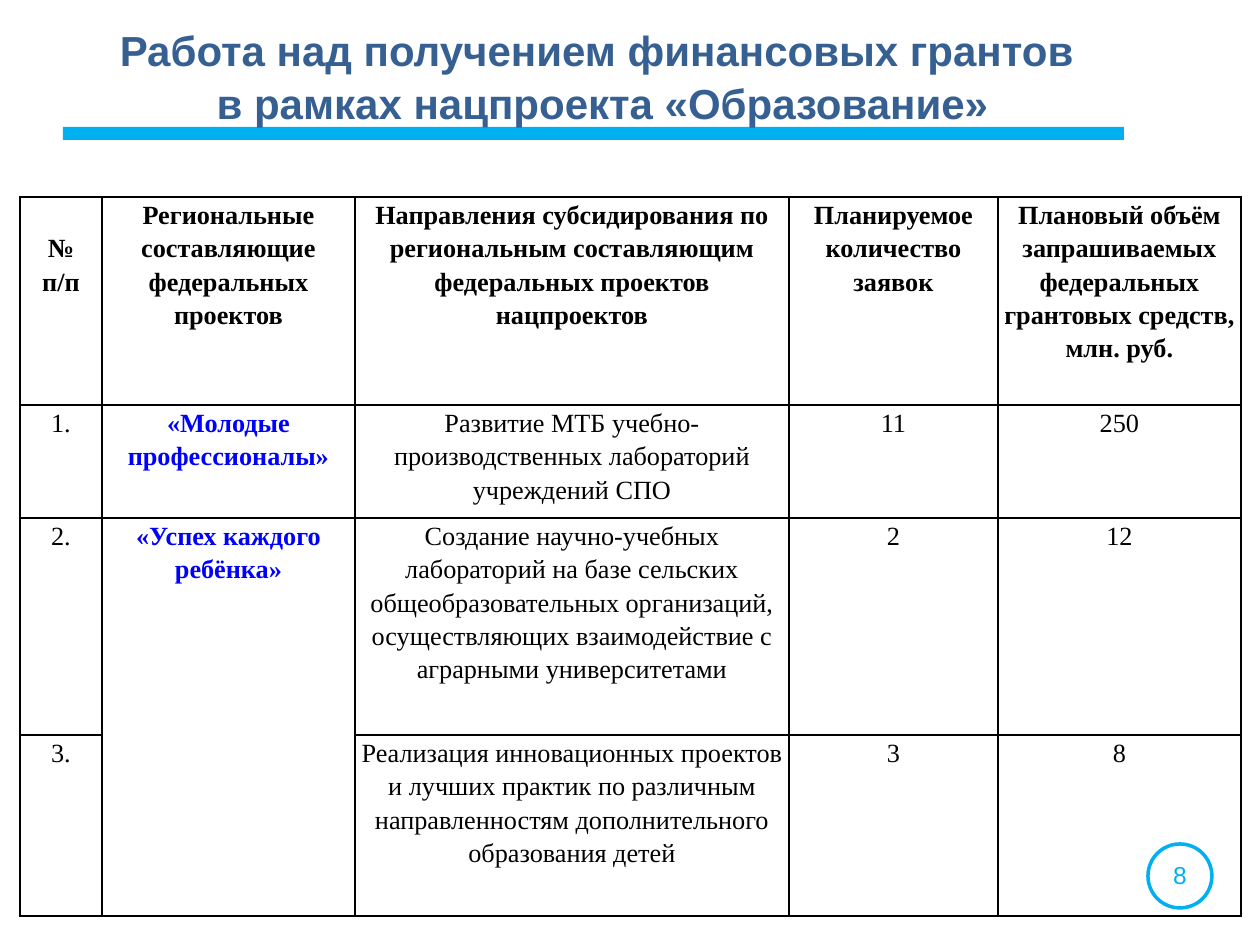
from lxml import etree
from pptx import Presentation
from pptx.dml.color import RGBColor
from pptx.enum.shapes import MSO_SHAPE
from pptx.enum.text import MSO_ANCHOR, PP_ALIGN
from pptx.oxml.ns import qn
from pptx.util import Emu, Pt

RECTANGLE, OVAL = MSO_SHAPE.RECTANGLE, MSO_SHAPE.OVAL
CENTER = PP_ALIGN.CENTER
TOP, MIDDLE = MSO_ANCHOR.TOP, MSO_ANCHOR.MIDDLE

COLORS = {
    "accent": "00B0F0",
    "title": "376092",
    "text": "000000",
    "project": "0000FF",
    "border": "000000",
}
PX_PER_INCH = 126

TITLE = [
    "Работа над получением финансовых грантов ",
    "в рамках нацпроекта «Образование»",
]
COLUMN_WIDTHS = [82, 253, 434, 209, 243]
ROW_HEIGHTS = [208, 113, 217, 181]
GRANTS = [
    [
        "\t№ п/п",
        "Региональные составляющие федеральных проектов",
        "Направления субсидирования по региональным составляющим "
        "федеральных проектов нацпроектов",
        "Планируемое количество заявок",
        "Плановый объём запрашиваемых федеральных грантовых средств, млн. руб.",
    ],
    [
        "1.",
        "«Молодые профессионалы»",
        "Развитие МТБ учебно-производственных лабораторий учреждений СПО",
        "11",
        "250",
    ],
    [
        "2.",
        "«Успех каждого ребёнка»",
        "Создание научно-учебных лабораторий на базе сельских "
        "общеобразовательных организаций, осуществляющих взаимодействие "
        "с аграрными университетами",
        "2",
        "12",
    ],
    [
        "3.",
        "",
        "Реализация инновационных проектов и лучших практик по различным "
        "направленностям дополнительного образования детей",
        "3",
        "8",
    ],
]


def px(value):
    return Emu(round(value * 914400 / PX_PER_INCH))


def color(name):
    return RGBColor.from_string(COLORS[name])


def style_paragraph(paragraph, font_name, size, color_name, bold=False):
    paragraph.alignment = CENTER
    for run in paragraph.runs:
        run.font.name = font_name
        run.font.size = Pt(size)
        run.font.bold = bold
        run.font.color.rgb = color(color_name)


def add_label(slide, left, top, width, height, anchor):
    frame = slide.shapes.add_textbox(px(left), px(top), px(width), px(height)).text_frame
    frame.word_wrap = True
    frame.vertical_anchor = anchor
    return frame


def add_heading(slide, left, top, width, height):
    # Accent bar under the title
    bar = slide.shapes.add_shape(RECTANGLE, px(left), px(top + 112), px(1061), px(13))
    bar.shadow.inherit = False
    bar.fill.solid()
    bar.fill.fore_color.rgb = color("accent")
    bar.line.fill.background()

    # Two-line title
    title = add_label(slide, left, top, width, height, TOP)
    title.text = "\n".join(TITLE)
    for line in title.paragraphs:
        line.line_spacing = 1.06
        style_paragraph(line, "Arial", 24, "title", bold=True)


def add_page_number(slide, left, top, size):
    # Ring
    ring = slide.shapes.add_shape(OVAL, px(left), px(top), px(size), px(size))
    ring.shadow.inherit = False
    ring.fill.background()
    ring.line.color.rgb = color("accent")
    ring.line.width = Pt(2)

    # Number
    number = add_label(slide, left - 4, top + 9, size + 8, 43, MIDDLE)
    number.text = "8"
    style_paragraph(number.paragraphs[0], "Arial", 14, "accent")


def add_borders(cell):
    properties = cell._tc.get_or_add_tcPr()
    for index, side in enumerate(("a:lnL", "a:lnR", "a:lnT", "a:lnB")):
        border = etree.Element(qn(side), w=str(Pt(1)))
        fill = etree.SubElement(border, qn("a:solidFill"))
        etree.SubElement(fill, qn("a:srgbClr"), val=COLORS["border"])
        properties.insert(index, border)


def fill_cell(cell, text, color_name, bold):
    cell.margin_left = cell.margin_right = px(6)
    cell.margin_top = cell.margin_bottom = 0
    cell.fill.background()
    add_borders(cell)
    cell.text_frame.text = text
    paragraph = cell.text_frame.paragraphs[0]
    paragraph.line_spacing = 1.15
    style_paragraph(paragraph, "Times New Roman", 15, color_name, bold)


def add_grants_table(slide, left, top):
    table = slide.shapes.add_table(
        len(ROW_HEIGHTS), len(COLUMN_WIDTHS), px(left), px(top),
        px(sum(COLUMN_WIDTHS)), px(sum(ROW_HEIGHTS)),
    ).table
    for column, width in zip(table.columns, COLUMN_WIDTHS):
        column.width = px(width)
    for row, height in zip(table.rows, ROW_HEIGHTS):
        row.height = px(height)

    # The second project covers two directions
    table.cell(2, 1).merge(table.cell(3, 1))

    for row_index, values in enumerate(GRANTS):
        for column_index, text in enumerate(values):
            is_header = row_index == 0
            is_project = column_index == 1 and not is_header
            fill_cell(
                table.cell(row_index, column_index), text,
                "project" if is_project else "text", is_header or is_project,
            )


def main():
    presentation = Presentation()
    presentation.slide_width = px(1260)
    presentation.slide_height = px(945)
    slide = presentation.slides.add_slide(presentation.slide_layouts[6])
    add_heading(slide, 63, 15, 1079, 110)
    add_page_number(slide, 1148, 844, 64)
    add_grants_table(slide, 20, 197)
    presentation.save("out.pptx")


if __name__ == "__main__":
    main()
